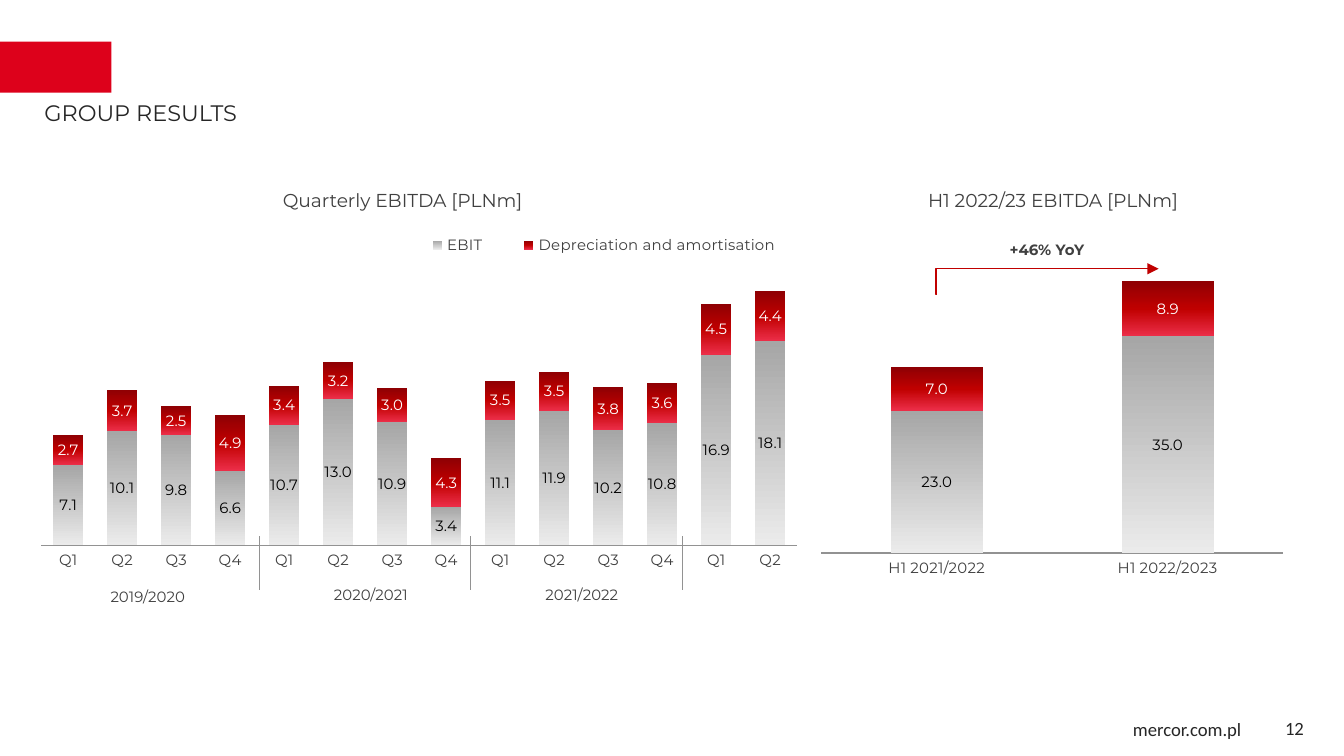
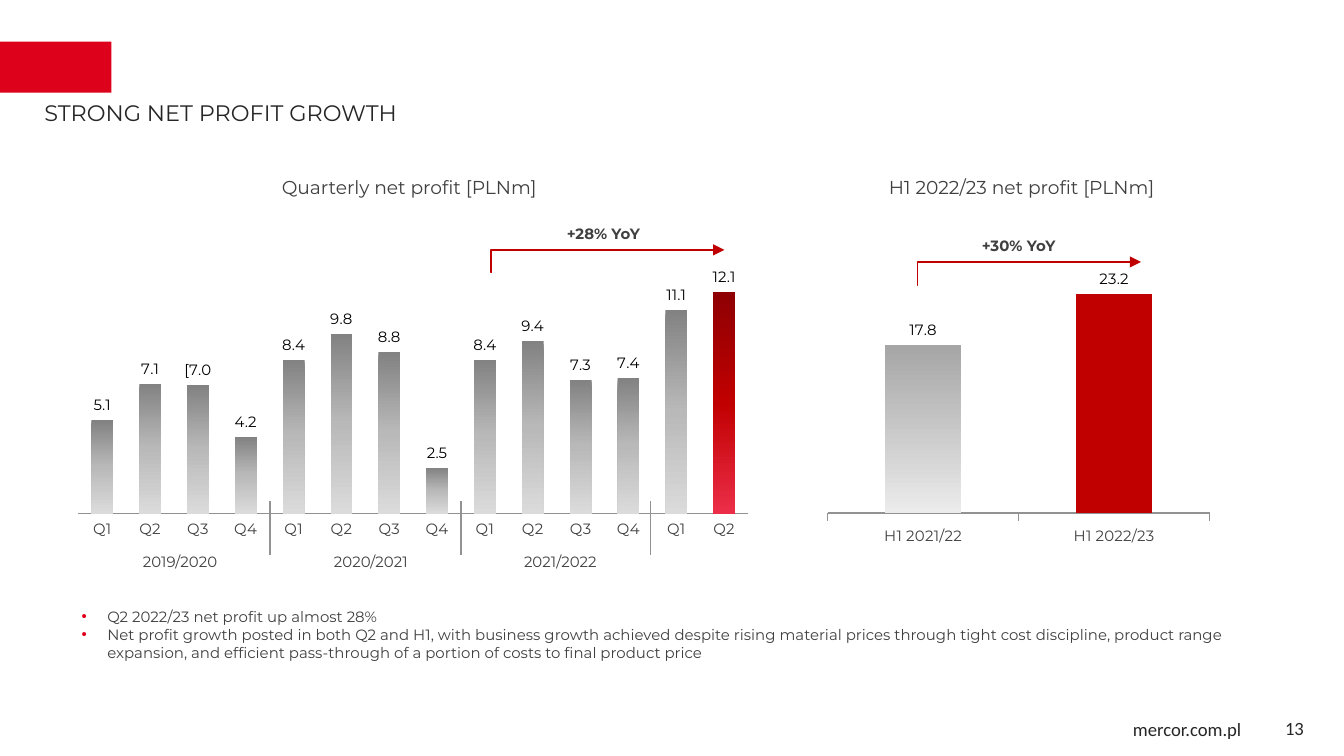
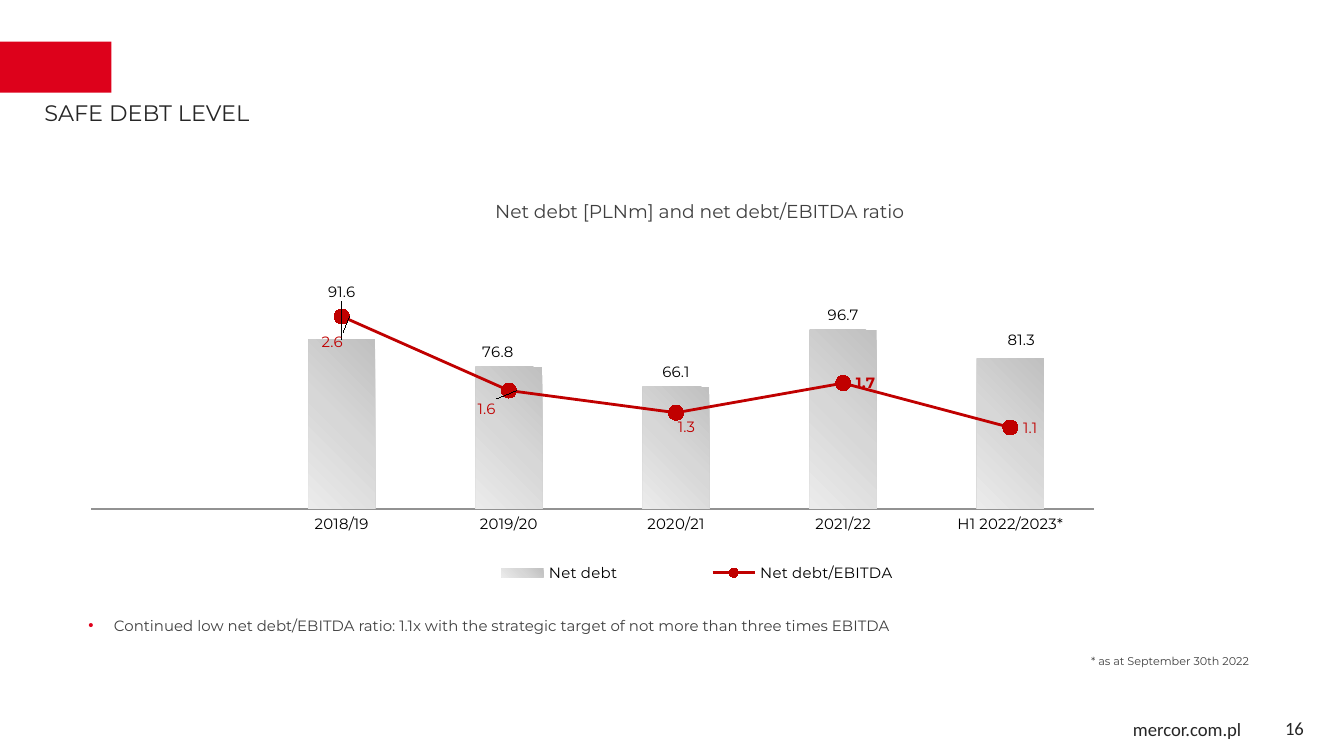
"""Build three result slides with charts for EBITDA, net profit and net debt."""
from copy import deepcopy

from pptx import Presentation
from pptx.chart.data import CategoryChartData
from pptx.dml.color import RGBColor
from pptx.enum.chart import XL_CHART_TYPE, XL_LABEL_POSITION, XL_LEGEND_POSITION, XL_MARKER_STYLE, XL_TICK_MARK
from pptx.enum.shapes import MSO_CONNECTOR, MSO_SHAPE
from pptx.enum.text import MSO_ANCHOR, MSO_AUTO_SIZE, PP_ALIGN
from pptx.oxml import parse_xml
from pptx.oxml.ns import nsdecls
from pptx.util import Inches, Pt


class Theme:
    font, foot_font = "Montserrat", "Calibri"
    band, bullet, accent = "DD011B", "E0001B", "C00000"
    dark, text, black, white, rule = "262626", "404040", "000000", "FFFFFF", "929292"
    title, head, body, note = 12, 10, 8, 6
    red = [(0, "8E0003"), (50, "C00000"), (99, "EB2D47")]
    light = [(0, "A6A6A6"), (100, "EBEBEB")]
    grey = [(0, "828282"), (50, "B9B9B9"), (100, "DBDBDB")]
    pale = [(0, "C0C0C0"), (50, "D7D7D7"), (100, "EBEBEB")]
    solid = [(0, "C00000")]


def style(font, size=Theme.body, color=Theme.text, bold=False, name=Theme.font):
    font.size, font.bold, font.name = Pt(size), bold, name
    font.color.rgb = RGBColor.from_string(color)


def add_text(s, at, lines, size=Theme.body, color=Theme.text, align=PP_ALIGN.LEFT,
             bold=False, name=Theme.font, pad=0.1, bullets=False):
    tf = s.shapes.add_textbox(*map(Inches, at)).text_frame
    tf.word_wrap, tf.auto_size = True, MSO_AUTO_SIZE.SHAPE_TO_FIT_TEXT
    tf.margin_left = tf.margin_right = Inches(pad)
    for i, line in enumerate(lines):
        p = tf.paragraphs[0] if i == 0 else tf.add_paragraph()
        p.alignment = align
        if bullets:
            pPr = p._p.get_or_add_pPr()
            pPr.set("marL", str(Inches(0.19)))
            pPr.set("indent", str(-Inches(0.19)))
            pPr.append(parse_xml(f'<a:buClr {nsdecls("a")}><a:srgbClr val="{Theme.bullet}"/></a:buClr>'))
            pPr.append(parse_xml(f'<a:buFont {nsdecls("a")} typeface="Arial"/>'))
            pPr.append(parse_xml(f'<a:buChar {nsdecls("a")} char="•"/>'))
        r = p.add_run()
        r.text = line
        style(r.font, size, color, bold, name)
    return tf


quarters = ["Q1", "Q2", "Q3", "Q4"] * 3 + ["Q1", "Q2"]
years = ["2019/2020", "2020/2021", "2021/2022"]
stacked, clustered = XL_CHART_TYPE.COLUMN_STACKED, XL_CHART_TYPE.COLUMN_CLUSTERED
above = XL_LABEL_POSITION.OUTSIDE_END

slides = [
    dict(
        title="GROUP RESULTS", page="12",
        heads=[((5, 1.36, 5.67, 0.27), "H1 2022/23 EBITDA [PLNm]"),
               ((0.16, 1.36, 5.67, 0.27), "Quarterly EBITDA [PLNm]")],
        charts=[
            dict(at=(0.19, 1.61, 5.86, 2.69), kind=stacked, cats=quarters, gap=79, overlap=100, top=25,
                 plot=(0.02, 0.13, 0.96, 0.78), legend=(0.47, 0.05, 0.53, 0.06),
                 legend_pos=XL_LEGEND_POSITION.TOP,
                 series=[("EBIT", [7.1, 10.1, 9.8, 6.6, 10.7, 13, 10.9, 3.4, 11.1, 11.9, 10.2, 10.8, 16.9, 18.1],
                          Theme.light, Theme.black),
                         ("Depreciation and amortisation",
                          [2.7, 3.7, 2.5, 4.9, 3.4, 3.2, 3, 4.3, 3.5, 3.5, 3.8, 3.6, 4.5, 4.4],
                          Theme.red, Theme.white)]),
            dict(at=(6.04, 1.76, 3.58, 2.59), kind=stacked, cats=["H1 2021/2022", "H1 2022/2023"],
                 gap=150, overlap=100, top=50, plot=(0.02, 0.02, 0.96, 0.89),
                 series=[("Series 1", [23, 35], Theme.light, Theme.black),
                         ("Series 2", [7, 8.9], Theme.red, Theme.white)])],
        dividers=[1.93, 3.5, 5.08], divider_top=3.99,
        year_spots=[(0.43, 4.32), (2.09, 4.31), (3.66, 4.31)],
        arrows=[((6.97, 2.19, 8.62, 2), (7.17, 1.74), "+46% YoY")]),
    dict(
        title="STRONG NET PROFIT GROWTH", page="13",
        heads=[((0.21, 1.26, 5.67, 0.27), "Quarterly net profit [PLNm]"),
               ((6.26, 1.26, 2.68, 0.27), "H1 2022/23 net profit [PLNm]")],
        charts=[
            dict(at=(0.48, 1.87, 5.19, 2.17), kind=clustered, cats=quarters, gap=119, overlap=69, top=14,
                 plot=(0.02, 0.02, 0.96, 0.88), label_pos=above, points={13: Theme.red}, texts={2: "[7.0"},
                 series=[("Series 1", [5.1, 7.1, 7, 4.2, 8.4, 9.8, 8.8, 2.5, 8.4, 9.4, 7.3, 7.4, 11.1, 12.1],
                          Theme.grey, Theme.black)]),
            dict(at=(6.1, 2, 2.96, 2.09), kind=clustered, cats=["H1 2021/22", "H1 2022/23"], gap=150, top=25,
                 plot=(0.02, 0.03, 0.96, 0.84), label_pos=above, points={1: Theme.solid},
                 tick=XL_TICK_MARK.OUTSIDE,
                 series=[("Series 1", [17.8, 23.2], Theme.light, Theme.black)])],
        dividers=[2.01, 3.43, 4.84], divider_top=3.73,
        year_spots=[(0.67, 4.06), (2.09, 4.06), (3.5, 4.06)],
        arrows=[((3.66, 2.03, 5.39, 1.86), (3.87, 1.62), "+28% YoY"),
                ((6.83, 2.12, 8.49, 1.95), (6.96, 1.71), "+30% YoY")],
        bullets=((0.51, 4.47, 8.77, 0.5), [
            "Q2 2022/23 net profit up almost 28%",
            "Net profit growth posted in both Q2 and H1, with business growth achieved despite rising material "
            "prices through tight cost discipline, product range expansion, and efficient pass-through of a "
            "portion of costs to final product price"])),
    dict(
        title="SAFE DEBT LEVEL", page="16",
        heads=[((2.41, 1.44, 5.59, 0.27), "Net debt [PLNm] and net debt/EBITDA ratio")],
        charts=[
            dict(at=(0.35, 1.81, 8.2, 2.71), kind=clustered, gap=150, top=120, ratio_top=3,
                 cats=["", "2018/19", "2019/20", "2020/21", "2021/22", "H1 2022/2023*"],
                 plot=(0.04, 0.12, 0.91, 0.61), legend=(0.33, 0.87, 0.52, 0.07),
                 legend_pos=XL_LEGEND_POSITION.BOTTOM, label_pos=above, angle=225, ink=Theme.black,
                 series=[("Net debt", [None, 91.6, 76.8, 66.1, 96.7, 81.3], Theme.pale, Theme.black),
                         ("Net debt/EBITDA", [None, 2.6, 1.6, 1.3, 1.7, 1.1], [], Theme.accent)],
                 shifts={(0, 1): (0, -0.09), (0, 2): (-0.01, 0), (0, 5): (0.01, -0.01),
                         (1, 1): (-0.03, 0.07), (1, 2): (-0.04, 0.05), (1, 3): (-0.01, 0.04)})],
        bullets=((0.56, 4.54, 8.77, 0.24), [
            "Continued low net debt/EBITDA ratio: 1.1x with the strategic target of not more than "
            "three times EBITDA"]),
        note=((8.02, 4.82, 1.73, 0.2), "* as at September 30th 2022")),
]

prs = Presentation()
prs.slide_width, prs.slide_height = Inches(10), Inches(10 * 9 / 16)

for spec in slides:
    s = prs.slides.add_slide(prs.slide_layouts[6])
    sp = s.shapes.add_shape(MSO_SHAPE.RECTANGLE, 0, Inches(0.31), Inches(0.83), Inches(0.38))
    sp.shadow.inherit = False
    sp.fill.solid()
    sp.fill.fore_color.rgb = RGBColor.from_string(Theme.band)
    sp.line.fill.background()
    add_text(s, (8.38, 5.29, 1.82, 0.27), ["mercor.com.pl"], Theme.head, Theme.dark,
             name=Theme.foot_font, pad=0.05)
    tf = add_text(s, (7.47, 5.27, 2.33, 0.3), [spec["page"]], Theme.head, Theme.dark, PP_ALIGN.RIGHT,
                  name=Theme.foot_font)
    tf.auto_size, tf.vertical_anchor = MSO_AUTO_SIZE.NONE, MSO_ANCHOR.MIDDLE
    add_text(s, (0.28, 0.69, 6.93, 0.3), [spec["title"]], Theme.title, Theme.dark, pad=0.05)
    for at, head in spec["heads"]:
        add_text(s, at, [head], Theme.head, align=PP_ALIGN.CENTER)

    for c in spec["charts"]:
        data = CategoryChartData(number_format="0.0")
        data.categories = c["cats"]
        for name, vals, *_ in c["series"]:
            data.add_series(name, vals)
        chart = s.shapes.add_chart(c["kind"], *map(Inches, c["at"]), data).chart
        style(chart.font, Theme.head, Theme.black, name=Theme.foot_font)
        chart.has_title = False
        plot = chart.plots[0]
        plot.gap_width, plot.overlap, plot.vary_by_categories = c["gap"], c.get("overlap", 0), False
        cat, val = chart.category_axis, chart.value_axis
        cat.major_tick_mark, cat.minor_tick_mark = c.get("tick", XL_TICK_MARK.NONE), XL_TICK_MARK.NONE
        cat.format.line.color.rgb = RGBColor.from_string(Theme.rule)
        cat.format.line.width = Pt(0.75)
        style(cat.tick_labels.font, color=c.get("ink", Theme.text))
        val.visible = val.has_major_gridlines = False
        val.minimum_scale, val.maximum_scale = 0, c["top"]

        plot_area = plot._element.getparent()
        for old in plot_area.xpath("c:layout"):
            plot_area.remove(old)
        edges = dict(xMode="edge", yMode="edge")
        layouts = [(plot_area, 0, dict(layoutTarget="inner", **edges, **dict(zip("xywh", c["plot"]))))]
        chart.has_legend = "legend" in c
        if chart.has_legend:
            chart.legend.position = c["legend_pos"]
            chart.legend.include_in_layout = False
            style(chart.legend.font, color=c.get("ink", Theme.text))
            layouts.append((chart.legend._element, 1, dict(**edges, **dict(zip("xywh", c["legend"])))))

        if "ratio_top" in c:
            line = parse_xml(
                f'<c:lineChart {nsdecls("c")}><c:grouping val="standard"/><c:varyColors val="0"/>'
                '<c:marker val="1"/><c:axId val="50010"/><c:axId val="50020"/></c:lineChart>')
            ser = plot.series[1]._element
            for flag in ser.xpath("c:invertIfNegative"):
                ser.remove(flag)
            line.insert(2, ser)
            plot._element.addnext(line)
            ratio_axis = parse_xml(
                f'<c:valAx {nsdecls("c", "a")}><c:axId val="50020"/><c:scaling>'
                f'<c:orientation val="minMax"/><c:max val="{c["ratio_top"]}"/><c:min val="0"/></c:scaling>'
                '<c:delete val="0"/><c:axPos val="r"/><c:numFmt formatCode="0" sourceLinked="0"/>'
                '<c:majorTickMark val="none"/><c:minorTickMark val="none"/><c:tickLblPos val="none"/>'
                '<c:spPr><a:ln><a:noFill/></a:ln></c:spPr><c:crossAx val="50010"/>'
                '<c:crosses val="max"/></c:valAx>')
            hidden_axis = parse_xml(
                f'<c:catAx {nsdecls("c")}><c:axId val="50010"/><c:scaling>'
                '<c:orientation val="minMax"/></c:scaling><c:delete val="1"/><c:axPos val="b"/>'
                '<c:crossAx val="50020"/></c:catAx>')
            val._element.addnext(ratio_axis)
            ratio_axis.addnext(hidden_axis)

        paints = []
        all_series = [ser for plot in chart.plots for ser in plot.series]
        for n, (ser, (name, vals, stops, ink)) in enumerate(zip(all_series, c["series"])):
            labels = ser.data_labels
            labels.show_value, labels.number_format, labels.number_format_is_linked = True, "0.0", False
            style(labels.font, color=ink)
            pos = c.get("label_pos")
            if stops:
                paints.append((ser.format, stops))
            else:
                pos = XL_LABEL_POSITION.RIGHT
                ser.smooth = False
                ser.format.line.width = Pt(1.5)
                ser.format.line.color.rgb = RGBColor.from_string(ink)
                ser.marker.style, ser.marker.size = XL_MARKER_STYLE.CIRCLE, 8
                ser.marker.format.fill.solid()
                ser.marker.format.fill.fore_color.rgb = RGBColor.from_string(ink)
                ser.marker.format.line.color.rgb = RGBColor.from_string(ink)
                style(ser.points[4].data_label.font, color=ink, bold=True)
                ser.points[4].data_label.position = pos
            if pos is not None:
                labels.position = pos
            for i, point_stops in c.get("points", {}).items():
                paints.append((ser.points[i].format, point_stops))
            for i, text in c.get("texts", {}).items():
                label = ser.points[i].data_label
                r = label.text_frame.paragraphs[0].add_run()
                r.text = text
                style(r.font, color=ink)
                label.position = pos
            for (k, i), shift in c.get("shifts", {}).items():
                if k == n:
                    label = ser.points[i].data_label
                    style(label.font, color=ink)
                    label.position = pos
                    dLbl = ser._element.xpath(f'c:dLbls/c:dLbl[c:idx/@val="{i}"]')[0]
                    layouts.append((dLbl, 1, dict(zip("xy", shift))))
            if "shifts" in c:
                labels._element.append(parse_xml(
                    f'<c:extLst {nsdecls("c")}><c:ext uri="{{CE6537A1-D6FC-4f65-9D91-7224C49458BB}}" '
                    'xmlns:c15="http://schemas.microsoft.com/office/drawing/2012/chart">'
                    '<c15:showLeaderLines val="0"/></c:ext></c:extLst>'))

        for fmt, stops in paints:
            if len(stops) == 1:
                fmt.fill.solid()
                fmt.fill.fore_color.rgb = RGBColor.from_string(stops[0][1])
                continue
            fmt.fill.gradient()
            fmt.fill.gradient_angle = c.get("angle", 270)
            gs = fmt.fill.gradient_stops[0]._gs
            for _ in stops[2:]:
                gs.addnext(deepcopy(gs))
            for stop, (where, color) in zip(fmt.fill.gradient_stops, stops):
                stop.position = where / 100
                stop.color.rgb = RGBColor.from_string(color)

        for parent, index, parts in layouts:
            inner = "".join(f'<c:{k} val="{v}"/>' for k, v in parts.items())
            parent.insert(index, parse_xml(
                f'<c:layout {nsdecls("c")}><c:manualLayout>{inner}</c:manualLayout></c:layout>'))

    top = spec.get("divider_top", 0)
    lines = [(MSO_CONNECTOR.STRAIGHT, (x, top, x, top + 0.4), Theme.rule) for x in spec.get("dividers", [])]
    lines += [(MSO_CONNECTOR.ELBOW, ends, Theme.accent) for ends, *_ in spec.get("arrows", [])]
    for kind, ends, color in lines:
        cn = s.shapes.add_connector(kind, *map(Inches, ends))
        cn.line.color.rgb = RGBColor.from_string(color)
        cn.line.width = Pt(0.75)
        spPr = cn._element.spPr
        if kind == MSO_CONNECTOR.ELBOW:
            geom = spPr.xpath("a:prstGeom")[0]
            for old in geom.xpath("a:avLst"):
                geom.remove(old)
            geom.append(parse_xml(f'<a:avLst {nsdecls("a")}><a:gd name="adj1" fmla="val -300"/></a:avLst>'))
            spPr.xpath("a:ln")[0].append(parse_xml(f'<a:tailEnd {nsdecls("a")} type="triangle"/>'))
        spPr.append(parse_xml(f'<a:effectLst {nsdecls("a")}/>'))

    for spot, year in zip(spec.get("year_spots", []), years):
        add_text(s, (*spot, 1.34, 0.24), [year], align=PP_ALIGN.CENTER)
    for ends, spot, growth in spec.get("arrows", []):
        add_text(s, (*spot, 1.24, 0.24), [growth], align=PP_ALIGN.CENTER, bold=True)
    if "bullets" in spec:
        add_text(s, *spec["bullets"], bullets=True)
    if "note" in spec:
        at, note = spec["note"]
        add_text(s, at, [note], Theme.note)

prs.save("out.pptx")
